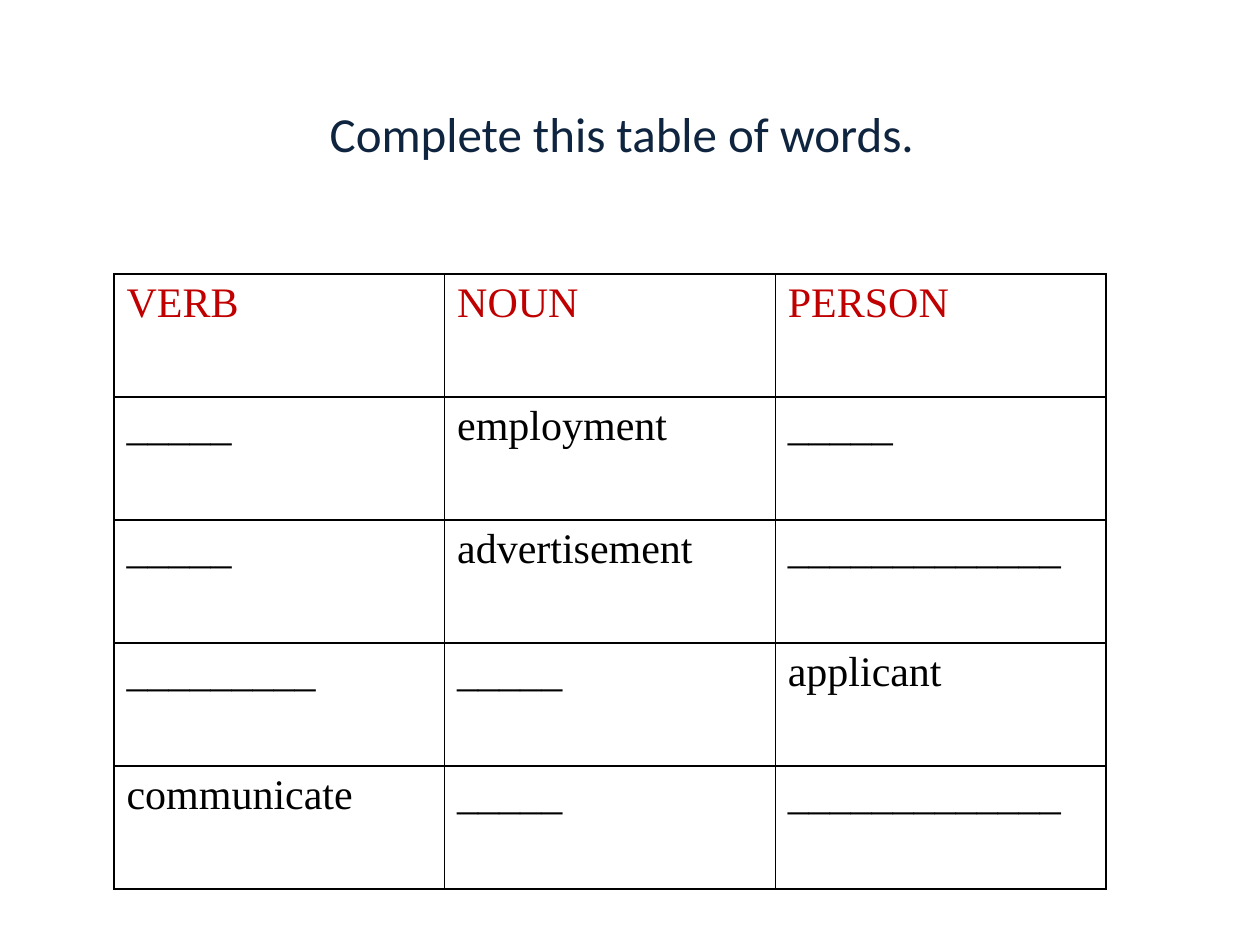
from lxml.etree import SubElement
from pptx import Presentation
from pptx.dml.color import RGBColor
from pptx.enum.text import MSO_ANCHOR, PP_ALIGN
from pptx.oxml.ns import qn
from pptx.util import Pt

PX = 914400 // 126
INK, NAVY, RED, WHITE = "000000", "0F243E", "C00000", "FFFFFF"
INDENT = 48
WORDS = [
    ["VERB", "NOUN", "PERSON"],
    ["_____", "employment", "_____"],
    ["_____", "advertisement", "_____________"],
    ["_________", "_____", "applicant"],
    ["communicate", "_____", "_____________"],
]


def px(n):
    return n * PX


def rgb(value):
    return RGBColor.from_string(value)


def add_run(p, text, color, **font):
    r = p.add_run()
    r.text = text
    r.font.color.rgb = rgb(color)
    for name, value in font.items():
        setattr(r.font, name, value)


def add_title(slide, x, y, w, h):
    tf = slide.shapes.add_textbox(px(x), px(y), px(w), px(h)).text_frame
    tf.word_wrap = True
    tf.vertical_anchor = MSO_ANCHOR.MIDDLE
    p = tf.paragraphs[0]
    p.alignment = PP_ALIGN.CENTER
    add_run(p, "Complete this table of words.", NAVY, name="Calibri", size=Pt(28))
    add_run(p, " ", NAVY, name="Calibri", size=Pt(44))


def set_borders(cell, color, width):
    """Draw all four cell borders; they must precede the fill in tcPr."""
    tcPr = cell._tc.get_or_add_tcPr()
    for i, side in enumerate(("a:lnL", "a:lnR", "a:lnT", "a:lnB")):
        ln = SubElement(tcPr, qn(side), w=str(Pt(width)))
        fill = SubElement(ln, qn("a:solidFill"))
        SubElement(fill, qn("a:srgbClr"), val=color)
        tcPr.insert(i, ln)


def fill_cell(cell, text, color):
    cell.fill.solid()
    cell.fill.fore_color.rgb = rgb(WHITE)
    set_borders(cell, INK, 1)
    p = cell.text_frame.paragraphs[0]
    pPr = p._p.get_or_add_pPr()
    pPr.set("marL", str(px(INDENT)))
    pPr.set("indent", str(-px(INDENT)))
    add_run(p, text, color, name="Times New Roman", size=Pt(24), bold=False)


def add_word_table(slide, x, y, w, h):
    rows, cols = len(WORDS), len(WORDS[0])
    table = slide.shapes.add_table(rows, cols, px(x), px(y), px(w), px(h)).table
    table.first_row = table.horz_banding = False
    for column in table.columns:
        column.width = px(w) // cols
    for i, (row, words) in enumerate(zip(table.rows, WORDS)):
        row.height = px(h) // rows
        for cell, word in zip(row.cells, words):
            fill_cell(cell, word, INK if i else RED)


def main():
    prs = Presentation()
    prs.slide_width, prs.slide_height = px(1260), px(945)
    slide = prs.slides.add_slide(prs.slide_layouts[6])
    add_title(slide, 95, 20, 1071, 203)
    add_word_table(slide, 114, 274, 992, 615)
    prs.save("out.pptx")


if __name__ == "__main__":
    main()
